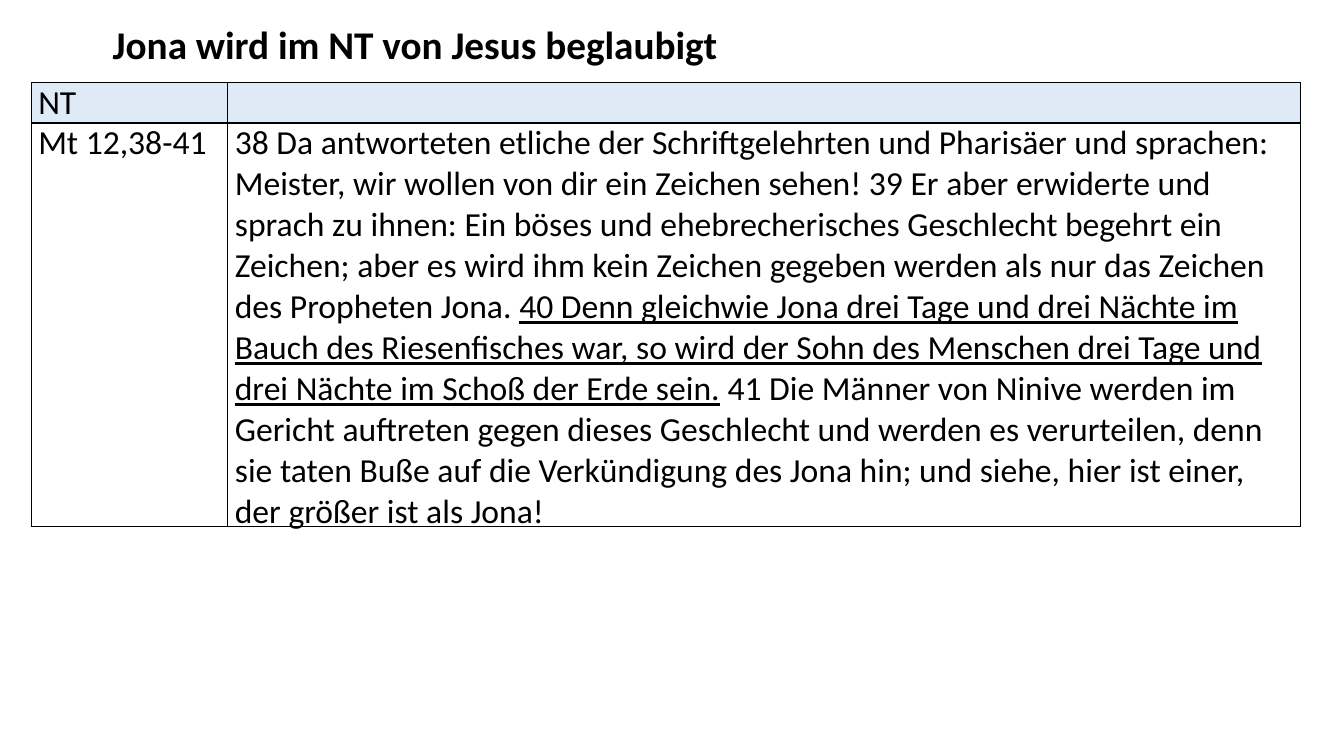
from pptx import Presentation
from pptx.dml.color import RGBColor as Rgb
from pptx.enum.text import MSO_AUTO_SIZE as Fit
from pptx.oxml import parse_xml
from pptx.oxml.ns import nsdecls
from pptx.util import Inches as In, Pt

theme = {
    "font": "Calibri",
    "ink": "000000",
    "head": "DEEAF6",
    "title": 28,
    "body": 24,
    "line": 1,
}


def style(para, size, bold=False):
    font = para.font
    font.name = theme["font"]
    font.size = Pt(size)
    font.bold = bold
    font.color.rgb = Rgb.from_string(theme["ink"])


def frame(cell):
    props = cell._tc.get_or_add_tcPr()
    for side in ("lnL", "lnR", "lnT", "lnB"):
        props.append(parse_xml(
            f'<a:{side} {nsdecls("a")} w="{Pt(theme["line"])}"><a:solidFill>'
            f'<a:srgbClr val="{theme["ink"]}"/></a:solidFill></a:{side}>'))


deck = Presentation()
deck.slide_width, deck.slide_height = In(13.33), In(7.5)
slide = deck.slides.add_slide(deck.slide_layouts[6])

title = slide.shapes.add_textbox(In(1.02), In(0.15), In(6.26), In(0.57)).text_frame
title.word_wrap = False
title.auto_size = Fit.SHAPE_TO_FIT_TEXT
title.text = "Jona wird im NT von Jesus beglaubigt"
style(title.paragraphs[0], theme["title"], True)

verse = [
    ("38 Da antworteten etliche der Schriftgelehrten und Pharisäer und sprachen: "
     "Meister, wir wollen von dir ein Zeichen sehen! 39 Er aber erwiderte und sprach "
     "zu ihnen: Ein böses und ehebrecherisches Geschlecht begehrt ein Zeichen; aber es "
     "wird ihm kein Zeichen gegeben werden als nur das Zeichen des Propheten Jona. ", False),
    ("40 Denn gleichwie Jona drei Tage und drei Nächte im Bauch des Riesenfisches war, "
     "so wird der Sohn des Menschen drei Tage und drei Nächte im Schoß der Erde sein.", True),
    (" 41 Die Männer von Ninive werden im Gericht auftreten gegen dieses Geschlecht und "
     "werden es verurteilen, denn sie taten Buße auf die Verkündigung des Jona hin; und "
     "siehe, hier ist einer, der größer ist als Jona!", False),
]
rows = [
    [[("NT", False)], []],
    [[("Mt 12,38-41", False)], verse],
]
wide = [1.95, 10.64]
high = [0.4, 4]

table = slide.shapes.add_table(
    len(high), len(wide), In(0.31), In(0.82), In(sum(wide)), In(sum(high))).table
table.first_row = table.horz_banding = False
for col, size in zip(table.columns, wide):
    col.width = In(size)
for row, size in zip(table.rows, high):
    row.height = In(size)

for r, row in enumerate(rows):
    for c, parts in enumerate(row):
        cell = table.cell(r, c)
        cell.margin_left = cell.margin_right = In(0.07)
        cell.margin_top = cell.margin_bottom = 0
        frame(cell)
        if r == 0:
            cell.fill.solid()
            cell.fill.fore_color.rgb = Rgb.from_string(theme["head"])
        else:
            cell.fill.background()
        para = cell.text_frame.paragraphs[0]
        style(para, theme["body"])
        for text, under in parts:
            run = para.add_run()
            run.text = text
            if under:
                run.font.underline = True

deck.save("out.pptx")
